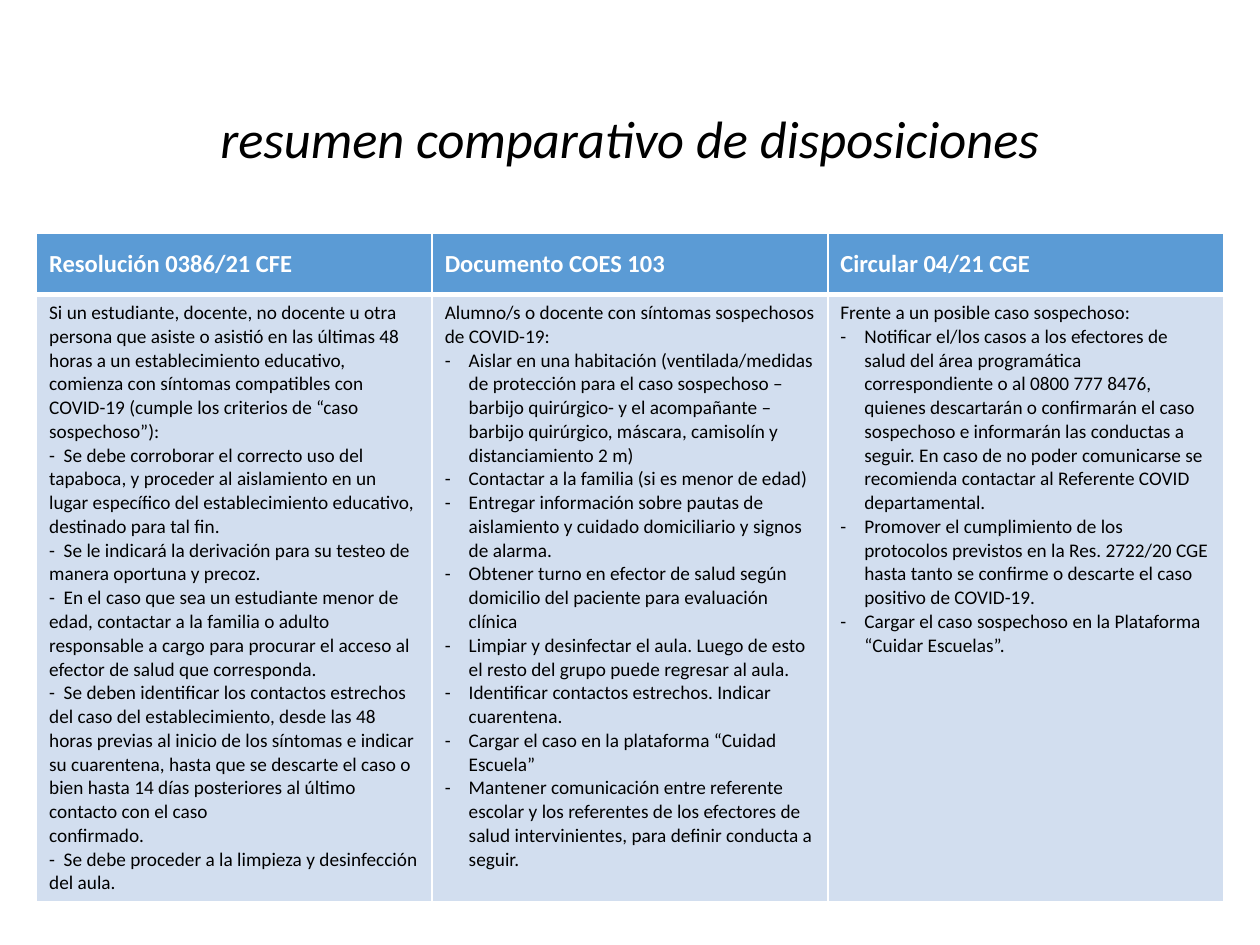
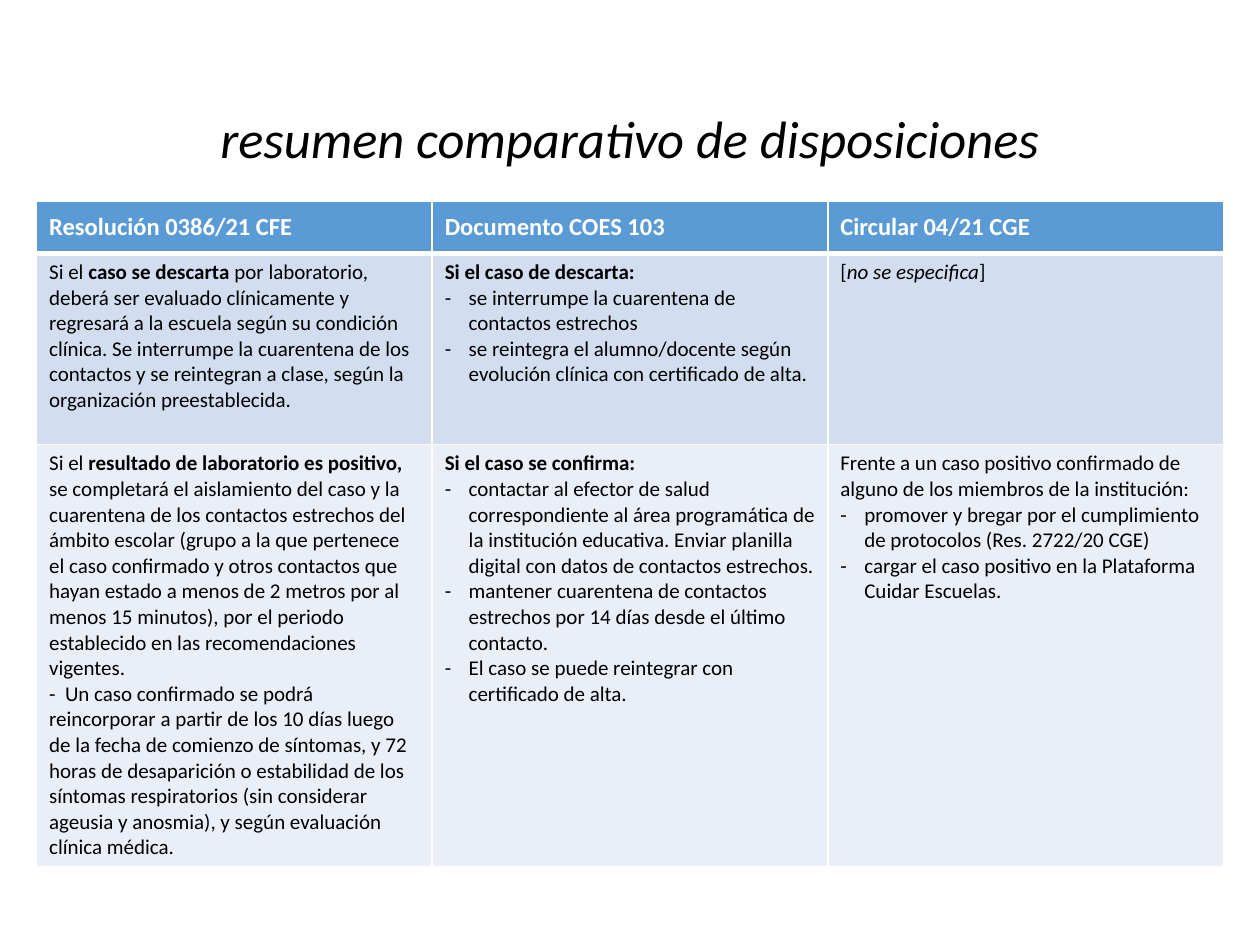
from lxml import etree
from pptx import Presentation
from pptx.dml.color import RGBColor
from pptx.enum.text import MSO_ANCHOR, PP_ALIGN
from pptx.oxml.ns import qn
from pptx.util import Inches, Pt

CENTER = PP_ALIGN.CENTER
TOP, MIDDLE = MSO_ANCHOR.TOP, MSO_ANCHOR.MIDDLE
TITLE_ONLY = 5

FONT = "Calibri"
BLACK, WHITE = "000000", "FFFFFF"
HEADER_FILL = "5B9BD5"
BAND_FILLS = ["D2DEEF", "EAEFF7"]
TITLE = "resumen comparativo de disposiciones"
HEADINGS = ["Resolución 0386/21 CFE", "Documento COES 103", "Circular 04/21 CGE"]
COLUMN_WIDTH = 3.14
INDENT = 0.19


def rgb(value):
    return RGBColor.from_string(value)


def add_run(p, text, size=12, color=BLACK, bold=False, italic=False):
    r = p.add_run()
    r.text = text
    font = r.font
    font.name, font.size = FONT, Pt(size)
    font.bold, font.italic = bold, italic
    font.color.rgb = rgb(color)


def add_bullet(p):
    props = p._p.get_or_add_pPr()
    props.set("marL", str(Inches(INDENT)))
    props.set("indent", str(-Inches(INDENT)))
    etree.SubElement(props, qn("a:buFont"), typeface=FONT)
    etree.SubElement(props, qn("a:buChar"), char="-")


def set_borders(cell, top=1, bottom=1):
    props = cell._tc.get_or_add_tcPr()
    for side, width in (("L", 1), ("R", 1), ("T", top), ("B", bottom)):
        line = etree.SubElement(props, qn(f"a:ln{side}"), w=str(Pt(width)))
        fill = etree.SubElement(line, qn("a:solidFill"))
        etree.SubElement(fill, qn("a:srgbClr"), val=WHITE)


class Deck:
    def __init__(self):
        self.prs = Presentation()
        self.prs.slide_width, self.prs.slide_height = Inches(10), Inches(7.5)
        self.s = None

    def add_slide(self, title):
        self.s = self.prs.slides.add_slide(self.prs.slide_layouts[TITLE_ONLY])
        sp = self.s.shapes.title
        sp.left, sp.top = Inches(0.69), Inches(0.4)
        sp.width, sp.height = Inches(8.62), Inches(1.45)
        tf = sp.text_frame
        tf.word_wrap, tf.vertical_anchor = True, MIDDLE
        p = tf.paragraphs[0]
        p.alignment, p.line_spacing = CENTER, 0.9
        add_run(p, title, size=30, italic=True)

    def fill_cell(self, cell, content, fill, anchor=TOP, **style):
        cell.fill.solid()
        cell.fill.fore_color.rgb = rgb(fill)
        cell.vertical_anchor = anchor
        tf = cell.text_frame
        paragraphs, bullets = content
        for i, item in enumerate(paragraphs + bullets):
            p = tf.add_paragraph() if i else tf.paragraphs[0]
            if i >= len(paragraphs):
                add_bullet(p)
            runs = [(item, {})] if isinstance(item, str) else item
            for text, emphasis in runs:
                add_run(p, text, **{**style, **emphasis})

    def add_comparison(self, top, heights, rows, size):
        shape = self.s.shapes.add_table(
            len(heights), len(HEADINGS), Inches(0.29), Inches(top),
            Inches(COLUMN_WIDTH * len(HEADINGS)), Inches(sum(heights)))
        table = shape.table
        for column in table.columns:
            column.width = Inches(COLUMN_WIDTH)
        for row, height in zip(table.rows, heights):
            row.height = Inches(height)
        for col, heading in enumerate(HEADINGS):
            cell = table.cell(0, col)
            set_borders(cell, bottom=3)
            self.fill_cell(cell, ([heading], []), HEADER_FILL, MIDDLE,
                           size=14, color=WHITE, bold=True)
        for i, contents in enumerate(rows):
            for col, content in enumerate(contents):
                cell = table.cell(i + 1, col)
                set_borders(cell, top=1 if i else 3)
                self.fill_cell(cell, content, BAND_FILLS[i % 2], size=size)


BOLD, ITALIC, PLAIN = {"bold": True}, {"italic": True}, {}

SUSPECTED_CASE = [
    ([
        "Si un estudiante, docente, no docente u otra persona que asiste o asistió en las "
        "últimas 48 horas a un establecimiento educativo, comienza con síntomas compatibles "
        "con COVID-19 (cumple los criterios de “caso sospechoso”):",
        "-  Se debe corroborar el correcto uso del tapaboca, y proceder al aislamiento en un "
        "lugar específico del establecimiento educativo, destinado para tal fin.",
        "-  Se le indicará la derivación para su testeo de manera oportuna y precoz.",
        "-  En el caso que sea un estudiante menor de edad, contactar a la familia o adulto "
        "responsable a cargo para procurar el acceso al efector de salud que corresponda.",
        "-  Se deben identificar los contactos estrechos del caso del establecimiento, desde "
        "las 48 horas previas al inicio de los síntomas e indicar su cuarentena, hasta que se "
        "descarte el caso o bien hasta 14 días posteriores al último contacto con el caso",
        "confirmado.",
        "-  Se debe proceder a la limpieza y desinfección del aula.",
    ], []),
    (["Alumno/s o docente con síntomas sospechosos de COVID-19:"], [
        "Aislar en una habitación (ventilada/medidas de protección para el caso sospechoso "
        "–barbijo quirúrgico- y el acompañante –barbijo quirúrgico, máscara, camisolín y "
        "distanciamiento 2 m)",
        "Contactar a la familia (si es menor de edad)",
        "Entregar información sobre pautas de aislamiento y cuidado domiciliario y signos "
        "de alarma.",
        "Obtener turno en efector de salud según domicilio del paciente para evaluación clínica",
        "Limpiar y desinfectar el aula. Luego de esto el resto del grupo puede regresar al aula.",
        "Identificar contactos estrechos. Indicar cuarentena.",
        "Cargar el caso en la plataforma “Cuidad Escuela”",
        "Mantener comunicación entre referente escolar y los referentes de los efectores de "
        "salud intervinientes, para definir conducta a seguir.",
    ]),
    (["Frente a un posible caso sospechoso:"], [
        "Notificar el/los casos a los efectores de salud del área programática "
        "correspondiente o al 0800 777 8476, quienes descartarán o confirmarán el caso "
        "sospechoso e informarán las conductas a seguir. En caso de no poder comunicarse se "
        "recomienda contactar al Referente COVID departamental.",
        "Promover el cumplimiento de los protocolos previstos en la Res. 2722/20 CGE hasta "
        "tanto se confirme o descarte el caso positivo de COVID-19.",
        "Cargar el caso sospechoso en la Plataforma “Cuidar Escuelas”.",
    ]),
]

DISCARDED_CASE = [
    ([[
        ("Si el ", PLAIN), ("caso se descarta ", BOLD),
        ("por laboratorio, deberá ser evaluado clínicamente y regresará a la escuela según su "
         "condición clínica. Se interrumpe la cuarentena de los contactos y se reintegran a "
         "clase, según la organización preestablecida.", PLAIN),
    ]], []),
    ([[("Si el caso de descarta:", BOLD)]], [
        "se interrumpe la cuarentena de contactos estrechos",
        "se reintegra el alumno/docente según evolución clínica con certificado de alta.",
    ]),
    ([[("[", PLAIN), ("no se especifica", ITALIC), ("]", PLAIN)]], []),
]

CONFIRMED_CASE = [
    ([
        [("Si el ", PLAIN), ("resultado de laboratorio es positivo, ", BOLD),
         ("se completará el aislamiento del caso y la cuarentena de los contactos estrechos "
          "del ámbito escolar (grupo a la que pertenece el caso confirmado y otros contactos "
          "que hayan estado a menos de 2 metros por al menos 15 minutos), por el periodo "
          "establecido en las recomendaciones vigentes.", PLAIN)],
        "-  Un caso confirmado se podrá reincorporar a partir de los 10 días luego de la fecha "
        "de comienzo de síntomas, y 72 horas de desaparición o estabilidad de los síntomas "
        "respiratorios (sin considerar ageusia y anosmia), y según evaluación clínica médica.",
    ], []),
    ([[("Si el caso se confirma:", BOLD)]], [
        "contactar al efector de salud correspondiente al área programática de la institución "
        "educativa. Enviar planilla digital con datos de contactos estrechos.",
        "mantener cuarentena de contactos estrechos por 14 días desde el último contacto.",
        "El caso se puede reintegrar con certificado de alta.",
    ]),
    (["Frente a un caso positivo confirmado de alguno de los miembros de la institución:"], [
        "promover y bregar por el cumplimiento de protocolos (Res. 2722/20 CGE)",
        "cargar el caso positivo en la Plataforma Cuidar Escuelas.",
    ]),
]


def main():
    deck = Deck()
    deck.add_slide(TITLE)
    deck.add_comparison(1.85, [0.49, 4.8], [SUSPECTED_CASE], size=11)
    deck.add_slide(TITLE)
    deck.add_comparison(1.6, [0.41, 1.52, 3.35], [DISCARDED_CASE, CONFIRMED_CASE], size=12)
    deck.prs.save("out.pptx")


if __name__ == "__main__":
    main()
